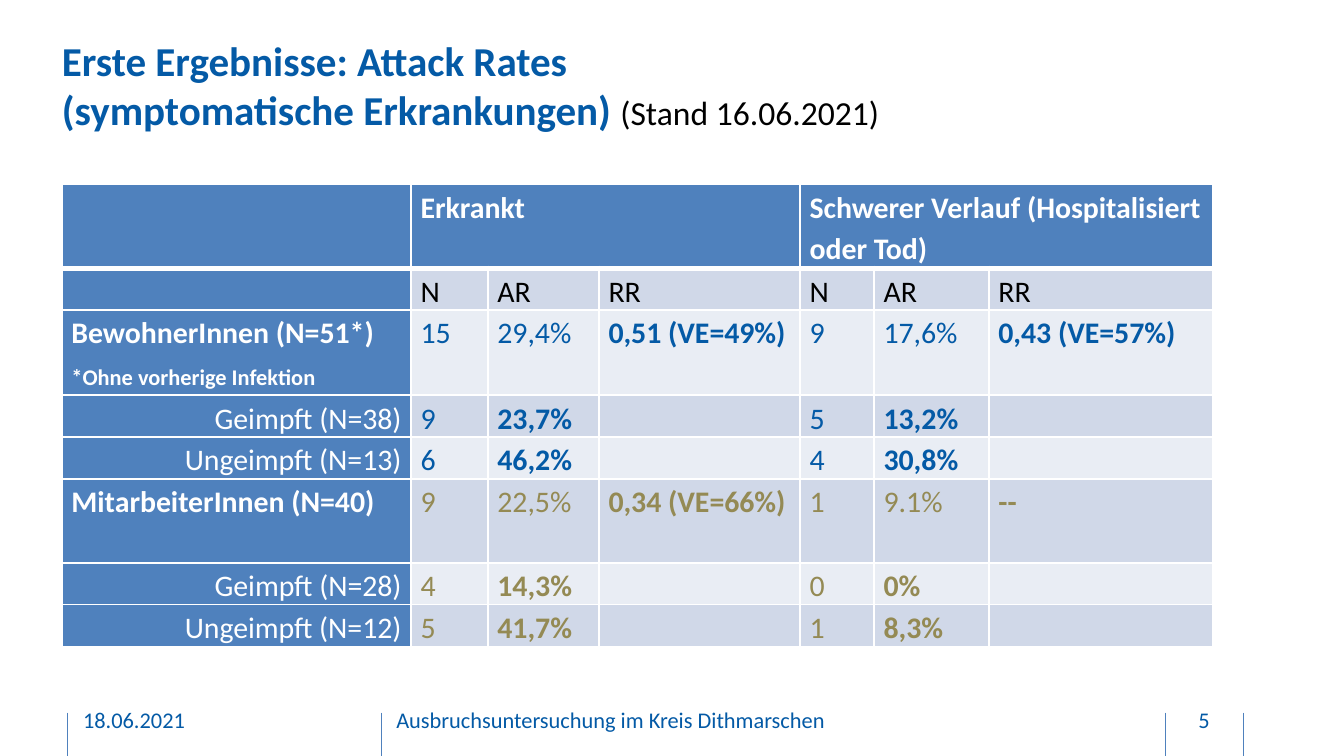
from lxml.etree import SubElement
from pptx import Presentation
from pptx.dml.color import RGBColor
from pptx.enum.shapes import MSO_CONNECTOR
from pptx.enum.text import MSO_ANCHOR, PP_ALIGN
from pptx.oxml.ns import qn
from pptx.util import Cm, Pt

COLORS = {
    "white": "FFFFFF", "black": "000000", "text": "045AA6", "head": "4F81BD",
    "dark": "D0D8E8", "light": "E9EDF4", "staff": "948A54",
}
FONT = "Calibri"
WIDTHS = [6.6, 1.45, 2.1, 3.8, 1.4, 2.17, 4.23]
HEIGHTS = [1.59, 0.79, 1.61, 0.79, 0.79, 1.59, 0.79, 0.79]
ROWS = [
    ["", "Erkrankt", "", "", "Schwerer Verlauf (Hospitalisiert oder Tod)", "", ""],
    ["", "N", "AR", "RR", "N", "AR", "RR"],
    ["BewohnerInnen (N=51*)", "15", "29,4%", "0,51 (VE=49%)",
     "9", "17,6%", "0,43 (VE=57%)"],
    ["Geimpft (N=38)", "9", "23,7%", "", "5", "13,2%", ""],
    ["Ungeimpft (N=13)", "6", "46,2%", "", "4", "30,8%", ""],
    ["MitarbeiterInnen (N=40)", "9", "22,5%", "0,34 (VE=66%)", "1", "9.1%", "--"],
    ["Geimpft (N=28)", "4", "14,3%", "", "0", "0%", ""],
    ["Ungeimpft (N=12)", "5", "41,7%", "", "1", "8,3%", ""],
]
GROUPS = (2, 5)  # rows that open a group of people


def rgb(name):
    return RGBColor.from_string(COLORS[name])


def put(para, text, size=16, color="text", bold=False, align=None, space=None):
    """Add a run to a paragraph and format both."""
    run = para.add_run()
    run.text = text
    font = run.font
    font.name, font.size, font.bold = FONT, Pt(size), bold
    font.color.rgb = rgb(color)
    if align is not None:
        para.alignment = align
    if space is not None:
        para.line_spacing = space


def add_box(slide, left, top, width, height, inset=0):
    """Add an empty text box and return its first paragraph."""
    frame = slide.shapes.add_textbox(
        Cm(left), Cm(top), Cm(width), Cm(height)).text_frame
    frame.word_wrap = True
    frame.vertical_anchor = MSO_ANCHOR.MIDDLE
    frame.margin_left = frame.margin_right = 0
    frame.margin_top = frame.margin_bottom = Cm(inset)
    return frame.paragraphs[0]


def add_rule(slide, left):
    line = slide.shapes.add_connector(
        MSO_CONNECTOR.STRAIGHT, Cm(left), Cm(13.47), Cm(left), Cm(14.29))
    line.line.color.rgb = rgb("head")
    line.line.width = Pt(0.5)
    SubElement(line._element.spPr, qn("a:effectLst"))


def set_edges(cell, row):
    """Draw white borders, thick between the first two rows."""
    props = cell._tc.get_or_add_tcPr()
    thick = {(0, "lnB"), (1, "lnT")}
    for spot, tag in enumerate(("lnL", "lnR", "lnT", "lnB")):
        width = Pt(3 if (row, tag) in thick else 1)
        edge = props.makeelement(qn("a:" + tag), {"w": str(width)})
        fill = SubElement(edge, qn("a:solidFill"))
        SubElement(fill, qn("a:srgbClr"), val=COLORS["white"])
        props.insert(spot, edge)


def get_style(row, col):
    """Return colour, boldness and alignment for a cell's text."""
    main = row in GROUPS
    if row == 0:
        return "white", True, None
    if col == 0:
        return "white", main, None if main else PP_ALIGN.RIGHT
    if row == 1:
        return "black", False, None
    bold = col in ((3, 6) if main else (2, 5))
    return "text" if row < GROUPS[1] else "staff", bold, None


def fill_cell(cell, row, col, text):
    cell.margin_left = cell.margin_right = Cm(0.18)
    cell.margin_top = cell.margin_bottom = 0
    band = "dark" if row % 2 else "light"
    cell.fill.solid()
    cell.fill.fore_color.rgb = rgb("head" if row == 0 or col == 0 else band)
    set_edges(cell, row)
    if text:
        color, bold, align = get_style(row, col)
        put(cell.text_frame.paragraphs[0], text, color=color, bold=bold,
            align=align, space=1.15)


def add_rates(slide):
    table = slide.shapes.add_table(
        len(ROWS), len(WIDTHS), Cm(1.17), Cm(3.48),
        Cm(sum(WIDTHS)), Cm(sum(HEIGHTS))).table
    table.first_row = table.horz_banding = False
    for col, width in zip(table.columns, WIDTHS):
        col.width = Cm(width)
    for line, height in zip(table.rows, HEIGHTS):
        line.height = Cm(height)
    for row, texts in enumerate(ROWS):
        for col, text in enumerate(texts):
            fill_cell(table.cell(row, col), row, col, text)
    for col in (1, 4):
        table.cell(0, col).merge(table.cell(0, col + 2))
    note = table.cell(GROUPS[0], 0).text_frame.add_paragraph()
    note.space_before = Pt(4.5)
    put(note, "*Ohne vorherige Infektion", size=12, color="white", bold=True,
        space=1.15)


def add_title(slide):
    para = add_box(slide, 1.17, 0.61, 22.17, 1.98)
    put(para, "Erste Ergebnisse: Attack Rates ", size=22, bold=True)
    para.add_line_break()
    put(para, "(symptomatische Erkrankungen) ", size=22, bold=True)
    put(para, "(Stand 16.06.2021)", size=18, color="black")


def add_footer(slide):
    for left in (1.27, 7.21, 22.02, 23.5):
        add_rule(slide, left)
    for left, width, text, align in (
        (7.49, 9.96, "Ausbruchsuntersuchung im Kreis Dithmarschen", None),
        (1.57, 5.16, "18.06.2021", None),
        (22.07, 1.37, "5", PP_ALIGN.CENTER),
    ):
        para = add_box(slide, left, 13.23, width, 0.76, inset=0.13)
        put(para, text, size=12, align=align)


def main():
    deck = Presentation()
    deck.slide_width, deck.slide_height = Cm(25.4), Cm(14.29)
    slide = deck.slides.add_slide(deck.slide_layouts[6])
    add_title(slide)
    add_rates(slide)
    add_footer(slide)
    deck.save("out.pptx")


if __name__ == "__main__":
    main()
